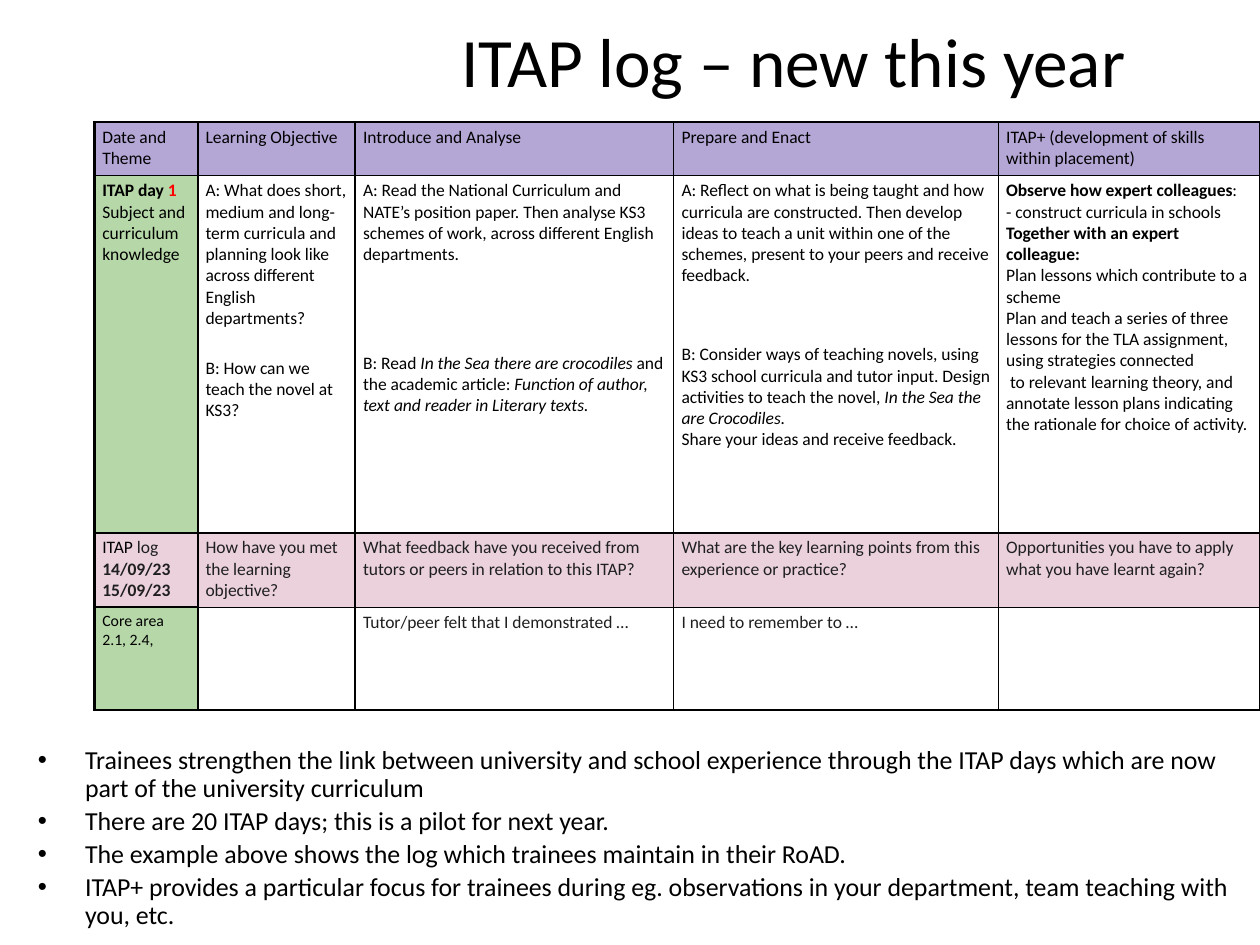
"""Build the ITAP log slide: title, log table and notes for mentors."""
from lxml.etree import SubElement
from pptx import Presentation
from pptx.dml.color import RGBColor as RGB
from pptx.enum.text import MSO_ANCHOR as Anchor, MSO_AUTO_SIZE as AutoSize, PP_ALIGN as Align
from pptx.oxml.ns import qn
from pptx.util import Pt

COLOURS = {"black": "000000", "ink": "1F1F1F", "red": "FF0000",
           "purple": "B4A7D6", "green": "B6D7A8", "pink": "EAD1DC"}
FONT = "Calibri"


def colour(name):
    return RGB.from_string(COLOURS[name])


def add_border(cell, side, width):
    line = SubElement(cell._tc.get_or_add_tcPr(), qn(f"a:{side}"), w=str(Pt(width)))
    fill = SubElement(line, qn("a:solidFill"))
    SubElement(fill, qn("a:srgbClr"), val=COLOURS["black"])


prs = Presentation()
prs.slide_width, prs.slide_height = Pt(720), Pt(540)
slide = prs.slides.add_slide(prs.slide_layouts[1])

title = slide.shapes.title
title.left, title.top, title.width, title.height = Pt(196), Pt(12.2), Pt(524), Pt(44)
title.text_frame.text = "ITAP log – new this year "
title.text_frame.auto_size = AutoSize.NONE
title.text_frame.vertical_anchor = Anchor.MIDDLE
heading = title.text_frame.paragraphs[0]
heading.alignment = Align.CENTER
heading.font.name, heading.font.size = FONT, Pt(39.6)
heading.font.color.rgb = colour("black")

notes = [
    "Trainees strengthen the link between university and school experience through the ITAP days "
    "which are now part of the university curriculum",
    "There are 20 ITAP days; this is a pilot for next year.",
    "The example above shows the log which trainees maintain in their RoAD.",
    "ITAP+ provides a particular focus for trainees during eg. observations in your department, "
    "team teaching with you, etc.",
]
body = slide.placeholders[1]
body.left, body.top, body.width, body.height = Pt(14.4), Pt(423.4), Pt(697.6), Pt(116.6)
body.text_frame.text = "\n".join(notes)
body.text_frame.auto_size = AutoSize.NONE
for note in body.text_frame.paragraphs:
    note.line_spacing = 0.9
    note.font.name, note.font.size = FONT, Pt(14.8)
    note.font.color.rgb = colour("black")
body.text_frame.paragraphs[0].space_before = Pt(0)

log_rows = [
    [
        ["Date and", "Theme"],
        ["Learning Objective"],
        ["Introduce and Analyse"],
        ["Prepare and Enact"],
        ["ITAP+ (development of skills within placement)"],
    ],
    [
        [[("ITAP day ", "bold"), ("1", "bold red")], "Subject and curriculum knowledge"],
        ["A: What does short, medium and long-term curricula and planning look like across "
         "different English departments?",
         "B: How can we teach the novel at KS3?"],
        ["A: Read the National Curriculum and NATE’s position paper. Then analyse KS3 schemes of "
         "work, across different English departments.",
         [("B: Read ", ""), ("In the Sea there are crocodiles", "italic"),
          (" and the academic article: ", ""),
          ("Function of author, text and reader in Literary texts.", "italic")]],
        ["A: Reflect on what is being taught and how curricula are constructed. Then develop ideas "
         "to teach a unit within one of the schemes, present to your peers and receive feedback.",
         [("B: Consider ways of teaching novels, using KS3 school curricula and tutor input. "
           "Design activities to teach the novel, ", ""),
          ("In the Sea the are Crocodiles.", "italic")],
         "Share your ideas and receive feedback."],
        [[("Observe how expert colleagues", "bold"), (":", "")],
         "- construct curricula in schools",
         [("Together with an expert colleague:", "bold")],
         "Plan lessons which contribute to a scheme",
         "Plan and teach a series of three lessons for the TLA assignment, using strategies connected",
         " to relevant learning theory, and annotate lesson plans indicating the rationale for "
         "choice of activity."],
    ],
    [
        [[("ITAP", "black"), (" log", "")], [("14/09/23", "bold")], [("15/09/23", "bold")]],
        ["How have you met the learning objective?"],
        ["What feedback have you received from tutors or peers in relation to this ITAP?"],
        ["What are the key learning points from this experience or practice?"],
        ["Opportunities you have to apply what you have learnt again?"],
    ],
    [
        [[("Core area 2.1, 2.4,", "black")]],
        [],
        ["Tutor/peer felt that I demonstrated …"],
        ["I need to remember to …"],
        [],
    ],
]
column_widths = [59, 90, 182, 185.5, 149.5]
row_heights = [30.7, 204, 42.6, 58.7]
column_lines = [1.5, 1.5, 1.5, 0.5, 0.5, 1.5]
row_lines = [1.5, 0.5, 1.5, 0.5, 1.5]
row_fills = ["purple", None, "pink", None]
row_inks = ["black", "black", "ink", "ink"]
part_b_gaps = {1: 16.4, 2: 50, 3: 33}

log = slide.shapes.add_table(4, 5, Pt(54), Pt(69.8), Pt(sum(column_widths)),
                             Pt(sum(row_heights))).table
log.first_row = log.horz_banding = False
for column, width in zip(log.columns, column_widths):
    column.width = Pt(width)
for row, height in zip(log.rows, row_heights):
    row.height = Pt(height)

for r, entries in enumerate(log_rows):
    for c, entry in enumerate(entries):
        cell = log.cell(r, c)
        cell.margin_left = cell.margin_right = Pt(4.5)
        cell.margin_top = cell.margin_bottom = Pt(2.6)
        top, bottom = row_lines[r:r + 2]
        if c == 0 and r == 2:
            bottom = 1.5
        if c == 0 and r == 3:
            top = 1.5
        for side, width in (("lnL", column_lines[c]), ("lnR", column_lines[c + 1]),
                            ("lnT", top), ("lnB", bottom)):
            add_border(cell, side, width)
        fill = row_fills[r] or ("green" if c == 0 else None)
        if fill:
            cell.fill.solid()
            cell.fill.fore_color.rgb = colour(fill)
        else:
            cell.fill.background()
        frame = cell.text_frame
        for p, content in enumerate(entry):
            paragraph = frame.add_paragraph() if p else frame.paragraphs[0]
            if r == 1 and p == 1 and c in part_b_gaps:
                paragraph.space_before = Pt(part_b_gaps[c])
            paragraph.font.name = FONT
            paragraph.font.size = Pt(9 if (r, c) == (3, 0) else 10)
            paragraph.font.color.rgb = colour(row_inks[r])
            for text, style in [(content, "")] if isinstance(content, str) else content:
                run = paragraph.add_run()
                run.text = text
                for word in style.split():
                    if word in COLOURS:
                        run.font.color.rgb = colour(word)
                    else:
                        setattr(run.font, word, True)

prs.save("out.pptx")
